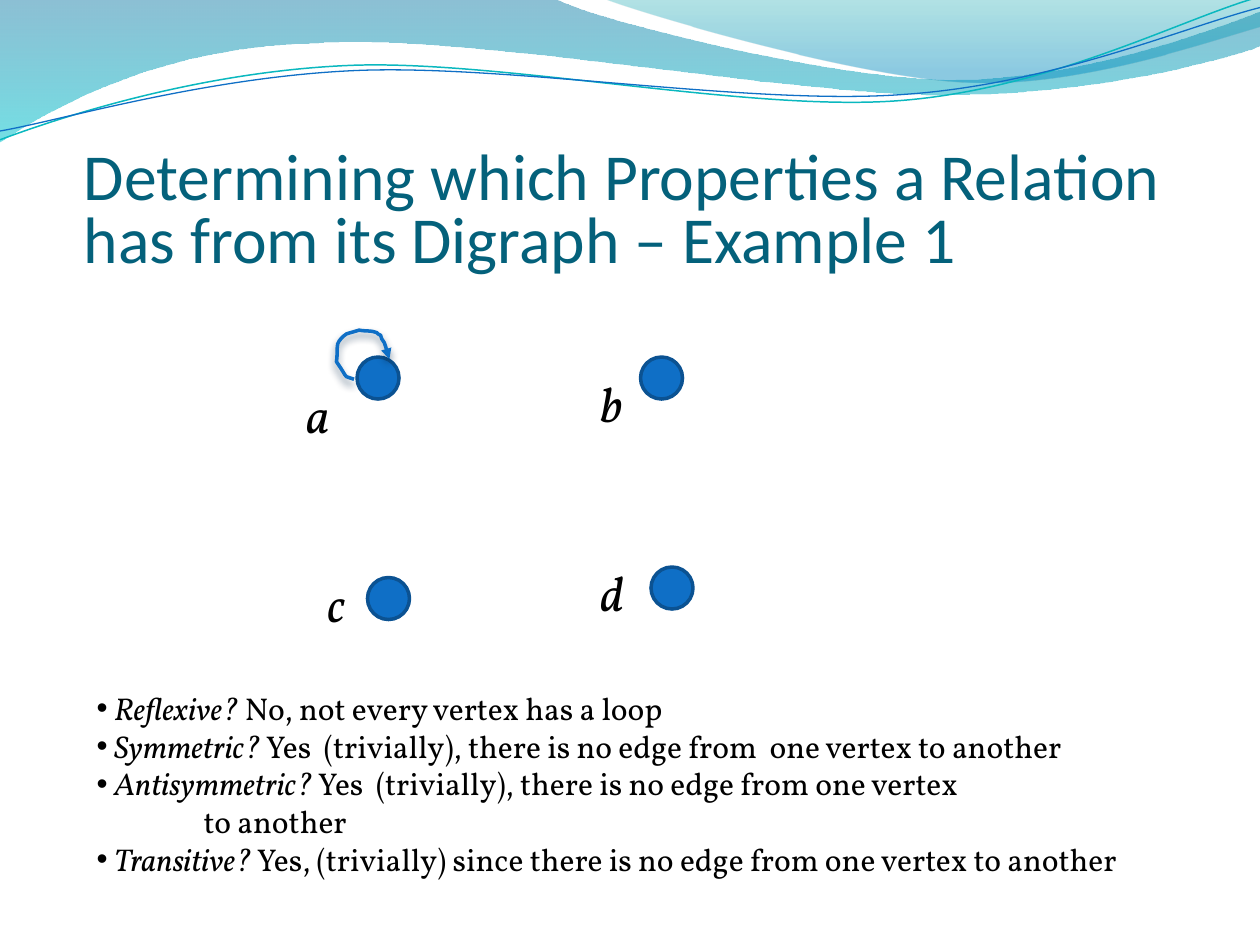
from lxml import etree
from pptx import Presentation, util as u
from pptx.dml.color import RGBColor
from pptx.enum import shapes, text
from pptx.oxml.ns import qn

COLOURS = {"blue": "0F6FC6", "outline": "0B5292", "teal": "0AB8BF", "title": "04617B",
           "ink": "000000", "shadow": "042747", "wave_top": "0074A1", "wave_end": "00C6CF",
           "crest_top": "00A1A9", "crest_end": "008BBF"}
rgb = {name: RGBColor.from_string(value) for name, value in COLOURS.items()}

presentation = Presentation()
presentation.slide_width, presentation.slide_height = u.Inches(10), u.Inches(7.5)
slide = presentation.slides.add_slide(presentation.slide_layouts[1])
CELL = u.Inches(1) / 12  # grid of twelve cells to the inch


def add_curve(start, segments, close=False):
    """Draw lines (2 numbers) and cubic curves (6 numbers), in inches, as one outline."""
    points = [(round(segment[i] * 100), round(segment[i + 1] * 100))
              for segment in segments for i in range(0, len(segment), 2)]
    builder = slide.shapes.build_freeform(round(start[0] * 100), round(start[1] * 100),
                                          scale=u.Inches(0.01))
    builder.add_line_segments(points, close=close)
    shape = builder.convert_to_shape()
    shape.shadow.inherit = False
    # Join the three lines that stand for each curve into one cubic curve
    lines = iter(list(shape._element.iter(qn("a:lnTo"))))
    for segment in segments:
        curve = next(lines)
        if len(segment) == 6:
            cubic = etree.Element(qn("a:cubicBezTo"))
            curve.addprevious(cubic)
            for part in (curve, next(lines), next(lines)):
                cubic.append(part[0])
                part.getparent().remove(part)
    return shape


def format_text(target, values):
    """Set the font attributes of a run."""
    target.font.color.rgb = rgb[values["colour"]]
    for name, value in values.items():
        if name != "colour":
            setattr(target.font, name, value)


# Header waves: start, outline, gradient stops (position, colour, opacity)
waves = [
    ((0, 0), [(4.4, -0.01), (4.76, 0.17, 6.64, 0.63, 7.58, 0.63),
              (8.53, 0.63, 9.58, 0.26, 10, 0.09), (10.01, 0.36),
              (9.83, 0.44, 8.7, 0.76, 7.46, 0.75), (6.22, 0.75, 3.82, 0.28, 2.57, 0.34),
              (1.29, 0.36, 0.46, 0.83, -0.01, 1.13), (0, 0)],
     [(0, "wave_top", 45), (1, "wave_end", 55)]),
    ((4.79, -0.01), [(5.09, 0.11, 6.82, 0.62, 7.69, 0.65),
                     (8.56, 0.69, 9.61, 0.32, 10, 0.21), (10, 0), (4.79, -0.01)],
     [(0, "crest_top", 30), (0.8, "crest_end", 45)]),
]
for start, segments, stops in waves:
    wave = add_curve(start, segments, close=True)
    wave.line.fill.background()
    wave.fill.gradient()
    wave.fill.gradient_angle = 270
    for stop, (position, colour, _) in zip(wave.fill.gradient_stops, stops):
        stop.position, stop.color.rgb = position, rgb[colour]
    for element, (_, _, opacity) in zip(wave._element.iter(qn("a:srgbClr")), stops):
        etree.SubElement(element, qn("a:alpha"), val=str(opacity * 1000))

# Header lines
header_lines = [
    ((0, 1.11), [(0.48, 0.93, 1.58, 0.57, 2.77, 0.52), (3.95, 0.47, 5.93, 0.89, 7.13, 0.8),
                 (8.33, 0.71, 9.38, 0.15, 9.98, -0.02)], "teal", 0.85),
    ((0, 1.04), [(0.47, 0.96, 1.64, 0.61, 2.83, 0.56), (4.03, 0.51, 5.97, 0.84, 7.17, 0.75),
                 (8.36, 0.67, 9.41, 0.21, 10, 0.06)], "blue", 0.75),
]
for start, segments, colour, width in header_lines:
    line = add_curve(start, segments)
    line.fill.background()
    line.line.color.rgb, line.line.width = rgb[colour], u.Pt(width)

# Title
title = slide.shapes.title
title.left, title.top, title.width, title.height = (
    int(8 * CELL), u.Inches(0.94), int(108 * CELL), int(15 * CELL))
frame = title.text_frame
frame_format = {"margin_left": 0, "margin_right": 0, "margin_top": u.Inches(0.05),
                "margin_bottom": 0, "word_wrap": True, "auto_size": text.MSO_AUTO_SIZE.NONE,
                "vertical_anchor": text.MSO_ANCHOR.BOTTOM}
for name, value in frame_format.items():
    setattr(frame, name, value)
frame.text = "Determining which Properties a Relation has from its Digraph – Example 1"
paragraph = frame.paragraphs[0]
paragraph.alignment, paragraph.line_spacing = text.PP_ALIGN.LEFT, 0.8
format_text(paragraph.runs[0], {"name": "Calibri", "size": u.Pt(37.5), "colour": "title"})

# Vertices and their labels: column and row of each on the grid
vertices = {"a": ((34, 34), (28, 36)), "b": ((61, 34), (56, 35)),
            "c": ((35, 55), (30, 54)), "d": ((62, 54), (56, 53))}
for letter, ((column, row), (label_column, label_row)) in vertices.items():
    vertex = slide.shapes.add_shape(shapes.MSO_SHAPE.OVAL, int(column * CELL), int(row * CELL),
                                    int(4 * CELL), int(4 * CELL))
    vertex.shadow.inherit = False
    vertex.fill.solid()
    vertex.fill.fore_color.rgb = rgb["blue"]
    vertex.line.color.rgb, vertex.line.width = rgb["outline"], u.Pt(2)
    label = slide.shapes.add_textbox(int(label_column * CELL), int(label_row * CELL),
                                     int(5 * CELL), u.Inches(0.57))
    label.text_frame.word_wrap = True
    label.text_frame.text = letter
    format_text(label.text_frame.paragraphs[0].runs[0],
                {"name": "Vollkorn", "size": u.Pt(28), "italic": True, "colour": "ink"})

# Loop on vertex a, with arrowhead and soft shadow
loop = add_curve((2.81, 3.01), [
    (2.73, 2.98, 2.76, 3.01, 2.71, 2.93), (2.69, 2.9), (2.67, 2.87),
    (2.68, 2.83, 2.67, 2.78, 2.68, 2.73), (2.69, 2.7, 2.72, 2.67, 2.75, 2.65),
    (2.78, 2.64, 2.82, 2.63, 2.85, 2.62), (2.88, 2.63, 2.95, 2.62, 2.99, 2.64),
    (3, 2.65, 3.01, 2.66, 3.02, 2.66), (3.02, 2.67, 3.03, 2.68, 3.03, 2.69),
    (3.04, 2.7, 3.04, 2.71, 3.05, 2.72), (3.06, 2.74, 3.06, 2.76, 3.07, 2.78),
    (3.08, 2.81), (3.09, 2.84, 3.09, 2.83, 3.09, 2.85)])
loop.fill.background()
loop.line.color.rgb, loop.line.width = rgb["blue"], u.Pt(2)
etree.SubElement(loop._element.spPr.find(qn("a:ln")), qn("a:tailEnd"), type="triangle")
shadow = etree.SubElement(loop._element.spPr.find(qn("a:effectLst")), qn("a:outerShdw"),
                          blurRad=str(u.Pt(4.5)), dist=str(u.Pt(3)), dir="5400000",
                          rotWithShape="0")
shadow_colour = etree.SubElement(shadow, qn("a:srgbClr"), val=COLOURS["shadow"])
etree.SubElement(shadow_colour, qn("a:alpha"), val="48000")

# Answers: question in italics, then the reason
answers = [
    ("Reflexive?", " No, not every vertex has a loop"),
    ("Symmetric?", " Yes  (trivially), there is no edge from  one vertex to another"),
    ("Antisymmetric?", " Yes  (trivially), there is no edge from one vertex"),
    ("", "to another"),
    ("Transitive?", " Yes, (trivially) since there is no edge from one vertex to another"),
]
body = slide.placeholders[1]
body.left, body.top, body.width, body.height = (
    int(8 * CELL), int(65 * CELL), int(105 * CELL), u.Inches(1.62))
frame = body.text_frame
frame.word_wrap, frame.auto_size = True, text.MSO_AUTO_SIZE.NONE
for index, (question, reason) in enumerate(answers):
    paragraph = frame.add_paragraph() if index else frame.paragraphs[0]
    paragraph.space_before = u.Pt(0)
    properties = paragraph._p.get_or_add_pPr()
    indent = u.Inches(0.14) if question else 0
    properties.set("marL", str(indent or u.Inches(0.85)))
    properties.set("indent", str(-indent))
    if question:
        etree.SubElement(properties, qn("a:buChar"), char="•")
    else:
        etree.SubElement(properties, qn("a:buNone"))
    for words, italic in ((question, True), (reason, False)):
        if words:
            run = paragraph.add_run()
            run.text = words
            format_text(run, {"name": "Vollkorn", "size": u.Pt(18), "italic": italic,
                              "colour": "ink"})

presentation.save("out.pptx")
